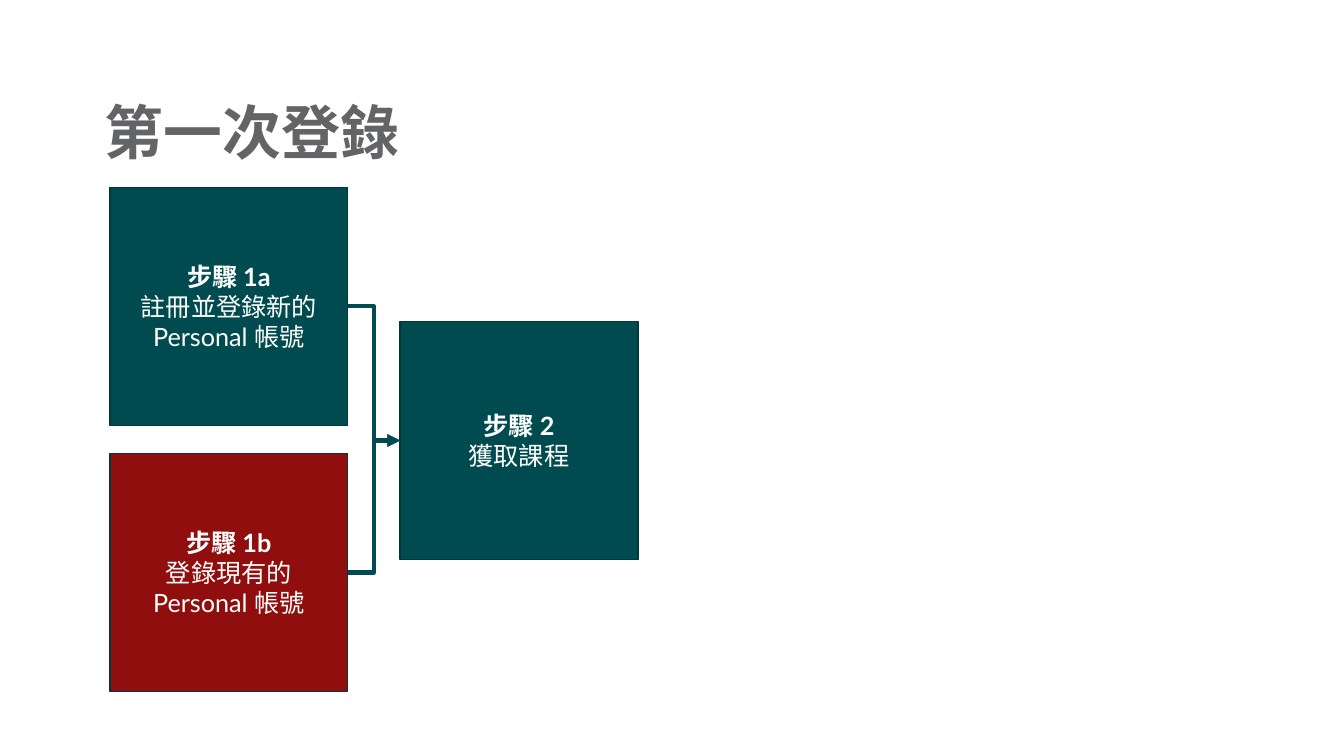
from lxml import etree
from pptx import Presentation
from pptx.dml.color import RGBColor
from pptx.enum.shapes import MSO_CONNECTOR, MSO_SHAPE
from pptx.enum.text import MSO_ANCHOR, MSO_AUTO_SIZE, PP_ALIGN
from pptx.oxml.ns import qn
from pptx.util import Pt

ELBOW = MSO_CONNECTOR.ELBOW
RECTANGLE = MSO_SHAPE.RECTANGLE
MIDDLE = MSO_ANCHOR.MIDDLE
LEFT, CENTER = PP_ALIGN.LEFT, PP_ALIGN.CENTER
RIGHT_SIDE, LEFT_SIDE = 3, 1

TEAL, DARK_TEAL, RED = "004B4F", "00373A", "900F0E"
BOX_SIZE = 169.9
FIRST_COLUMN, SECOND_COLUMN = 78.5, 285.8


def color(value):
    return RGBColor.from_string(value)


def write(para, text, size=18, fill="FFFFFF", bold=False, align=CENTER):
    para.alignment = align
    span = para.add_run()
    span.text = text
    span.font.name = "Lato"
    span.font.size = Pt(size)
    span.font.bold = bold
    span.font.color.rgb = color(fill)


deck = Presentation()
deck.slide_width, deck.slide_height = Pt(960), Pt(540)
page = deck.slides.add_slide(deck.slide_layouts[5])

# Title
title = page.shapes.title
title.left, title.top, title.width, title.height = Pt(74.9), Pt(71.3), Pt(695.5), Pt(50.4)
frame = title.text_frame
frame.auto_size = MSO_AUTO_SIZE.NONE
frame.word_wrap = True
frame.vertical_anchor = MIDDLE
frame.margin_left = 0
frame.paragraphs[0].line_spacing = 0.9
write(frame.paragraphs[0], "第一次登錄", size=42, fill="636466", bold=True, align=LEFT)

# Step boxes
steps = [
    ("步驟 1a", "註冊並登錄新的 Personal 帳號", FIRST_COLUMN, 133.9, TEAL),
    ("步驟 2", "獲取課程", SECOND_COLUMN, 229.7, TEAL),
    ("步驟 1b", "登錄現有的 Personal 帳號", FIRST_COLUMN, 324, RED),
]
boxes = []
for heading, detail, left, top, fill in steps:
    box = page.shapes.add_shape(RECTANGLE, Pt(left), Pt(top), Pt(BOX_SIZE), Pt(BOX_SIZE))
    box.shadow.inherit = False
    box.fill.solid()
    box.fill.fore_color.rgb = color(fill)
    box.line.color.rgb = color(DARK_TEAL)
    box.line.width = Pt(1)
    frame = box.text_frame
    frame.word_wrap = True
    frame.vertical_anchor = MIDDLE
    write(frame.paragraphs[0], heading, bold=True)
    write(frame.add_paragraph(), detail)
    boxes.append(box)

# Arrows from both first steps to the second
register, get_course, sign_in = boxes
for start in (sign_in, register):
    arrow = page.shapes.add_connector(ELBOW, 0, 0, 0, 0)
    arrow.begin_connect(start, RIGHT_SIDE)
    arrow.end_connect(get_course, LEFT_SIDE)
    arrow.line.color.rgb = color(TEAL)
    arrow.line.width = Pt(3)
    properties = arrow.element.spPr
    etree.SubElement(properties.find(qn("a:ln")), qn("a:tailEnd"), type="triangle")
    etree.SubElement(properties, qn("a:effectLst"))

deck.save("out.pptx")
